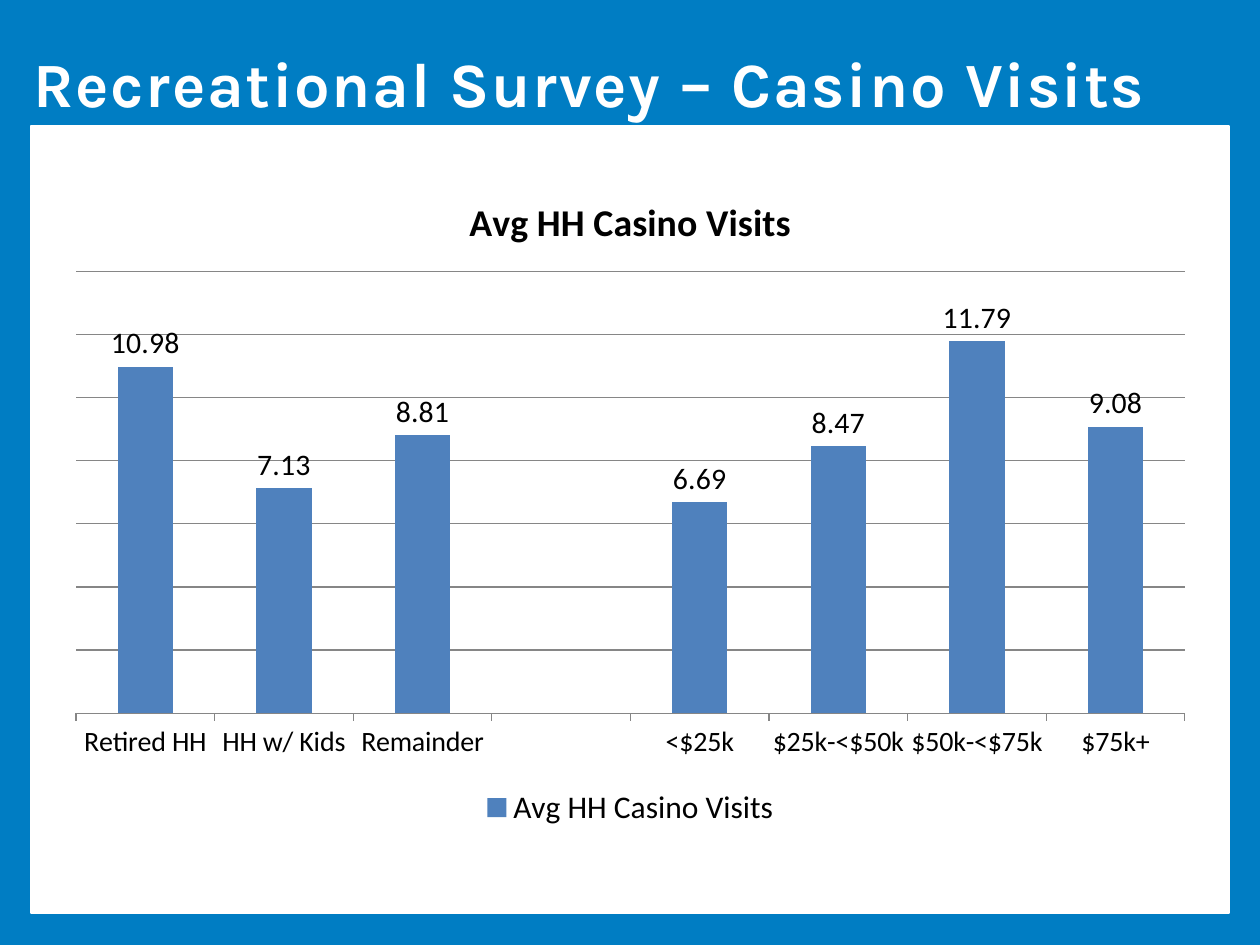
from dataclasses import dataclass
from typing import Any

from pptx import Presentation
from pptx import util as u
from pptx.chart import data as chart_data
from pptx.dml import color
from pptx.enum import chart as charts, shapes, text

EMU_PER_INCH = 914400
PX_PER_INCH = 126


@dataclass(frozen=True)
class Theme:
    blue: str = "007DC3"
    white: str = "FFFFFF"
    black: str = "000000"
    bar: str = "4F81BD"
    grid: str = "868686"
    heading_font: str = "Karla"
    body_font: str = "Calibri"
    heading_size: float = 36
    chart_title_size: float = 21.6
    chart_size: float = 18
    label_size: float = 17
    axis_size: float = 16
    heading_spacing: int = 100


@dataclass(frozen=True)
class Box:
    left: int
    top: int
    width: int
    height: int

    def emu(self) -> tuple[u.Emu, ...]:
        return tuple(px(n) for n in (self.left, self.top, self.width, self.height))


@dataclass(frozen=True)
class Panel:
    box: Box
    fill: str


@dataclass(frozen=True)
class Visit:
    household: str
    average: float | None


THEME = Theme()
SLIDE = Box(0, 0, 1260, 945)
PANELS = [Panel(SLIDE, THEME.blue), Panel(Box(31, 126, 1198, 787), THEME.white)]
HEADING_BOX = Box(21, 38, 1218, 88)
CHART_BOX = Box(53, 168, 1155, 665)
SERIES_NAME = "Avg HH Casino Visits"
VISITS = [
    Visit("Retired HH", 10.98),
    Visit("HH w/ Kids", 7.13),
    Visit("Remainder", 8.81),
    Visit("", None),
    Visit("<$25k", 6.69),
    Visit("$25k-<$50k", 8.47),
    Visit("$50k-<$75k", 11.79),
    Visit("$75k+", 9.08),
]


def px(length: int) -> u.Emu:
    return u.Emu(length * EMU_PER_INCH // PX_PER_INCH)


def apply(target: Any, **values: Any) -> None:
    for name, value in values.items():
        setattr(target, name, value)


def rgb(value: str) -> color.RGBColor:
    return color.RGBColor.from_string(value)


def style_font(font: Any, name: str, size: float, ink: str, bold: bool = False) -> None:
    apply(font, name=name, size=u.Pt(size), bold=bold)
    font.color.rgb = rgb(ink)


def draw_panel(slide: Any, panel: Panel) -> None:
    shape = slide.shapes.add_shape(shapes.MSO_SHAPE.RECTANGLE, *panel.box.emu())
    shape.shadow.inherit = False
    shape.fill.solid()
    shape.fill.fore_color.rgb = rgb(panel.fill)
    shape.line.color.rgb = rgb(panel.fill)
    shape.line.width = u.Pt(1)


def draw_heading(slide: Any, words: str) -> None:
    frame = slide.shapes.add_textbox(*HEADING_BOX.emu()).text_frame
    apply(frame, word_wrap=True, vertical_anchor=text.MSO_ANCHOR.MIDDLE)
    run = frame.paragraphs[0].add_run()
    run.text = words
    style_font(run.font, THEME.heading_font, THEME.heading_size, THEME.white, True)
    run.font._element.set("spc", str(THEME.heading_spacing))


def style_axes(chart: Any) -> None:
    category, value = chart.category_axis, chart.value_axis
    apply(category, major_tick_mark=charts.XL_TICK_MARK.OUTSIDE,
          minor_tick_mark=charts.XL_TICK_MARK.NONE)
    style_font(category.tick_labels.font, THEME.body_font, THEME.axis_size, THEME.black)
    apply(value, visible=False, has_major_gridlines=True,
          minimum_scale=0, maximum_scale=14, major_unit=2)
    apply(value.tick_labels, number_format="0.00", number_format_is_linked=False)
    for line in (category.format.line, value.major_gridlines.format.line):
        line.color.rgb = rgb(THEME.grid)
        line.width = u.Pt(0.75)


def draw_chart(slide: Any, visits: list[Visit]) -> None:
    content = chart_data.CategoryChartData(number_format="0.00")
    content.categories = [visit.household for visit in visits]
    content.add_series(SERIES_NAME, [visit.average for visit in visits])
    chart = slide.shapes.add_chart(
        charts.XL_CHART_TYPE.COLUMN_CLUSTERED, *CHART_BOX.emu(), content).chart
    style_font(chart.font, THEME.body_font, THEME.chart_size, THEME.black)

    apply(chart, has_title=True, has_legend=True)
    run = chart.chart_title.text_frame.paragraphs[0].add_run()
    run.text = SERIES_NAME
    style_font(run.font, THEME.body_font, THEME.chart_title_size, THEME.black, True)
    chart.chart_title.include_in_layout = False
    apply(chart.legend, position=charts.XL_LEGEND_POSITION.BOTTOM, include_in_layout=False)
    style_font(chart.legend.font, THEME.body_font, THEME.chart_size, THEME.black)
    style_axes(chart)

    plot = chart.plots[0]
    apply(plot, gap_width=150, vary_by_categories=False, has_data_labels=True)
    apply(plot.data_labels, show_value=True, number_format="0.00",
          number_format_is_linked=False, position=charts.XL_LABEL_POSITION.OUTSIDE_END)
    style_font(plot.data_labels.font, THEME.body_font, THEME.label_size, THEME.black)
    fill = plot.series[0].format.fill
    fill.solid()
    fill.fore_color.rgb = rgb(THEME.bar)


def main() -> None:
    presentation = Presentation()
    apply(presentation, slide_width=px(SLIDE.width), slide_height=px(SLIDE.height))
    slide = presentation.slides.add_slide(presentation.slide_layouts[6])
    for panel in PANELS:
        draw_panel(slide, panel)
    draw_heading(slide, "Recreational Survey – Casino Visits")
    draw_chart(slide, VISITS)
    presentation.save("out.pptx")


if __name__ == "__main__":
    main()
